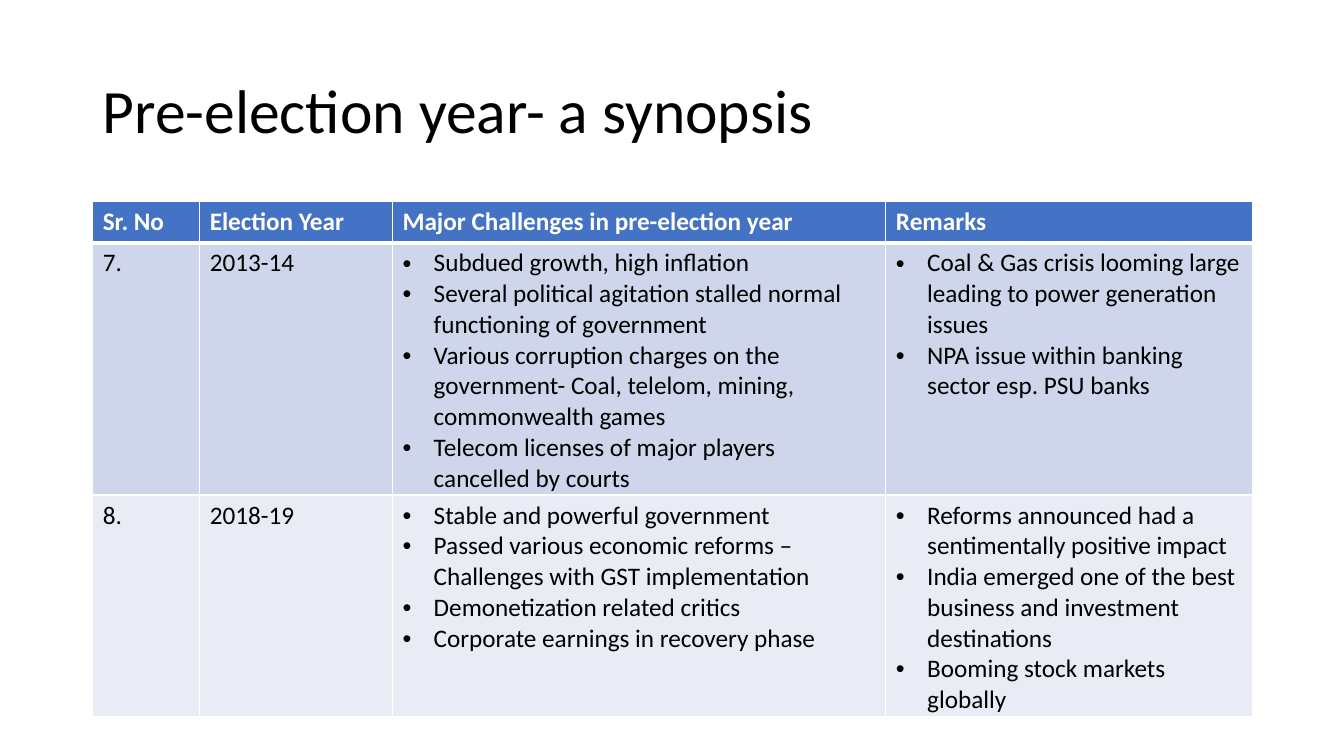
import pptx
import pptx.util
import pptx.dml.color
import pptx.enum.text
import pptx.oxml
import pptx.oxml.ns

WIDE = pptx.util.Inches(13.33)
HIGH = pptx.util.Inches(7.5)
FONT = "Calibri"
INK = "000000"
WHITE = "FFFFFF"
LEFT = 0.92 / 13.33
SPAN = 11.5 / 13.33
COLS = [1.06, 1.91, 4.89, 3.63]
ROW = 0.41 / 7.5
FILLS = ["4472C4", "CFD5EA", "E9EBF5"]
INDENT = pptx.util.Inches(0.31)

ROWS = [
    ["Sr. No", "Election Year", "Major Challenges in pre-election year", "Remarks"],
    [
        "7.",
        "2013-14",
        [
            "Subdued growth, high inflation",
            "Several political agitation stalled normal functioning of government",
            "Various corruption charges on the government- Coal, telelom, mining, commonwealth games",
            "Telecom licenses of major players cancelled by courts",
        ],
        [
            "Coal & Gas crisis looming large leading to power generation issues",
            "NPA issue within banking sector esp. PSU banks",
        ],
    ],
    [
        "8.",
        "2018-19",
        [
            "Stable and powerful government",
            "Passed various economic reforms – Challenges with GST implementation",
            "Demonetization related critics",
            "Corporate earnings in recovery phase",
        ],
        [
            "Reforms announced had a sentimentally positive impact",
            "India emerged one of the best business and investment destinations",
            "Booming stock markets globally",
        ],
    ],
]


def across(share):
    return round(WIDE * share)


def down(share):
    return round(HIGH * share)


def color(code):
    return pptx.dml.color.RGBColor.from_string(code)


def style(para, size, code, bold=False):
    para.font.name = FONT
    para.font.size = pptx.util.Pt(size)
    para.font.bold = bold
    para.font.color.rgb = color(code)


def bullet(para):
    props = para._p.get_or_add_pPr()
    props.set("marL", str(INDENT))
    props.set("indent", str(-INDENT))
    space = pptx.oxml.ns.nsdecls("a")
    for tag in (f'<a:buFont {space} typeface="Arial"/>', f'<a:buChar {space} char="•"/>'):
        props.append(pptx.oxml.parse_xml(tag))


def border(cell, widths):
    props = cell._tc.get_or_add_tcPr()
    space = pptx.oxml.ns.nsdecls("a")
    for spot, (side, width) in enumerate(zip("LRTB", widths)):
        line = pptx.oxml.parse_xml(
            f'<a:ln{side} {space} w="{pptx.util.Pt(width)}"><a:solidFill>'
            f'<a:srgbClr val="{WHITE}"/></a:solidFill></a:ln{side}>'
        )
        props.insert(spot, line)


def add_title(slide, text):
    box = slide.shapes.add_textbox(
        across(LEFT), down(0.4 / 7.5), across(SPAN), down(1.45 / 7.5)
    )
    frame = box.text_frame
    frame.word_wrap = True
    frame.vertical_anchor = pptx.enum.text.MSO_ANCHOR.MIDDLE
    para = frame.paragraphs[0]
    para.text = text
    para.line_spacing = 0.9
    style(para, 44, INK)


def fill_cell(cell, text, row):
    head = row == 0
    listed = isinstance(text, list)
    cell.text = "\n".join(text) if listed else text
    for para in cell.text_frame.paragraphs:
        if listed:
            bullet(para)
        style(para, 18, WHITE if head else INK, head)
    cell.fill.solid()
    cell.fill.fore_color.rgb = color(FILLS[row])
    border(cell, (1, 1, 3 if row == 1 else 1, 3 if head else 1))


def add_grid(slide, rows):
    table = slide.shapes.add_table(
        len(rows), len(COLS), across(LEFT), down(2 / 7.5),
        across(SPAN), down(ROW * len(rows)),
    ).table
    for column, part in zip(table.columns, COLS):
        column.width = across(SPAN * part / sum(COLS))
    for row, texts in enumerate(rows):
        table.rows[row].height = down(ROW)
        for col, text in enumerate(texts):
            fill_cell(table.cell(row, col), text, row)


def main():
    deck = pptx.Presentation()
    deck.slide_width = WIDE
    deck.slide_height = HIGH
    slide = deck.slides.add_slide(deck.slide_layouts[6])
    add_title(slide, "Pre-election year- a synopsis")
    add_grid(slide, ROWS)
    deck.save("out.pptx")


if __name__ == "__main__":
    main()
